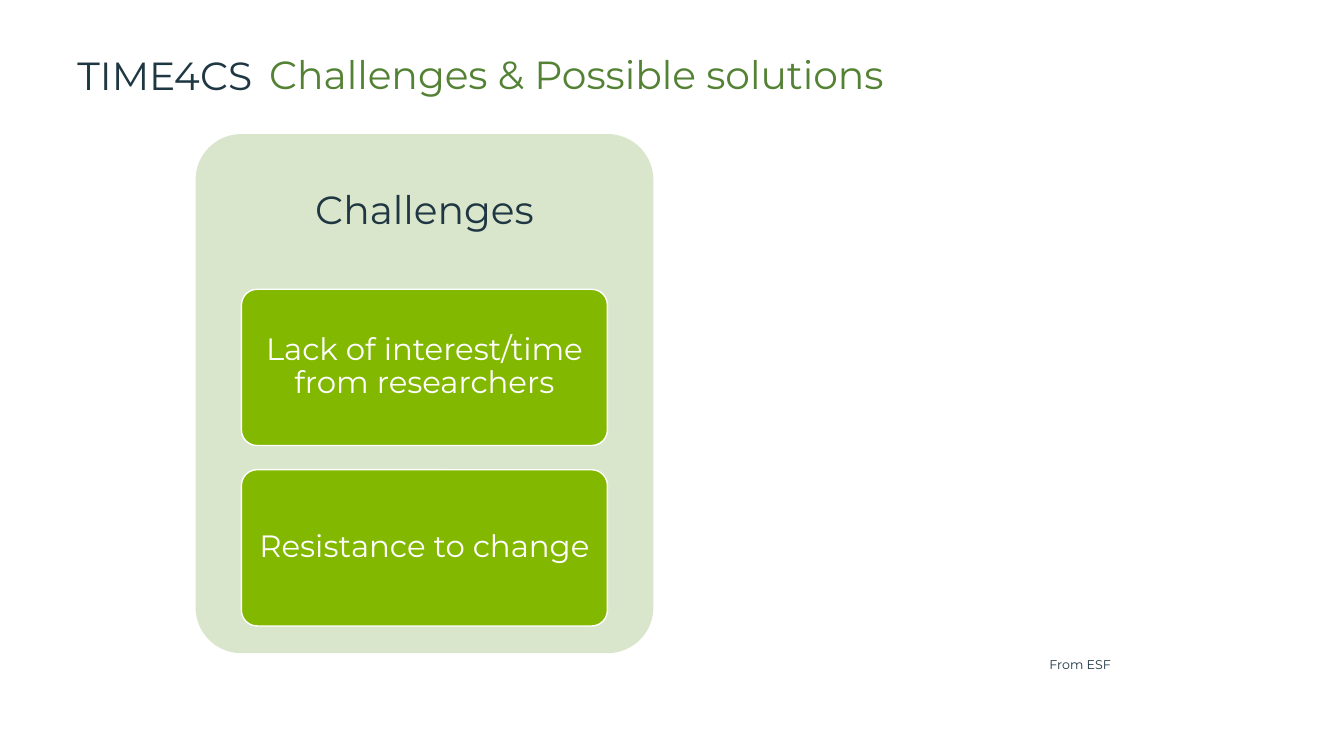
from pptx import Presentation
from pptx.dml.color import RGBColor
from pptx.enum import shapes, text
from pptx.util import Inches, Pt

# Content
TITLE = "TIME4CS"
TOPIC = "Challenges & Possible solutions"
HEAD = "Challenges"
CARDS = ["Lack of interest/time from researchers", "Resistance to change"]
NOTE = "From ESF"

FONT = "Montserrat"
HEX = {"dark": "1F3643", "title": "548235", "panel": "D9E6CC",
       "card": "83B801", "white": "FFFFFF"}

# Layout in inches: left, top, width, height
PANEL = (1.94, 1.33, 4.54, 5.15)
HEAD_H = 1.54
CARD_W, CARD_H, STEP = 3.63, 1.55, 1.79

prs = Presentation()
prs.slide_width, prs.slide_height = Inches(13.33), Inches(7.5)
slide = prs.slides.add_slide(prs.slide_layouts[6])


def color(name):
    return RGBColor.from_string(HEX[name])


def write(shape, words, size, tone, center=False, tight=False):
    frame = shape.text_frame
    frame.word_wrap = True
    frame.text = words
    para = frame.paragraphs[0]
    para.alignment = text.PP_ALIGN.CENTER if center else text.PP_ALIGN.LEFT
    if tight:
        para.line_spacing = 0.9
    frame.vertical_anchor = (text.MSO_ANCHOR.MIDDLE if center
                             else text.MSO_ANCHOR.TOP)
    font = para.runs[0].font
    font.name, font.size = FONT, Pt(size)
    font.color.rgb = color(tone)


def label(box, *args, **style):
    write(slide.shapes.add_textbox(*map(Inches, box)), *args, **style)


def block(box, fill, line=None):
    shape = slide.shapes.add_shape(
        shapes.MSO_SHAPE.ROUNDED_RECTANGLE, *map(Inches, box))
    shape.adjustments[0] = 0.1
    shape.shadow.inherit = False
    shape.fill.solid()
    shape.fill.fore_color.rgb = color(fill)
    if line:
        shape.line.color.rgb = color(line)
        shape.line.width = Pt(1)
    else:
        shape.line.fill.background()
    return shape


# Title line
label((0.67, 0.46, 2.03, 0.57), TITLE, 28, "dark")
label((2.57, 0.5, 10.09, 0.46), TOPIC, 28, "title", tight=True)

# Panel with heading
left, top, width, _ = PANEL
block(PANEL, "panel")
label((left, top, width, HEAD_H), HEAD, 28, "dark", center=True, tight=True)

# Challenge cards, centred in the panel
for i, words in enumerate(CARDS):
    box = (left + (width - CARD_W) / 2, top + HEAD_H + i * STEP, CARD_W, CARD_H)
    write(block(box, "card", "white"), words, 22, "white",
          center=True, tight=True)

# Source note
label((10.31, 6.47, 0.97, 0.25), NOTE, 9, "dark")

prs.save("out.pptx")
